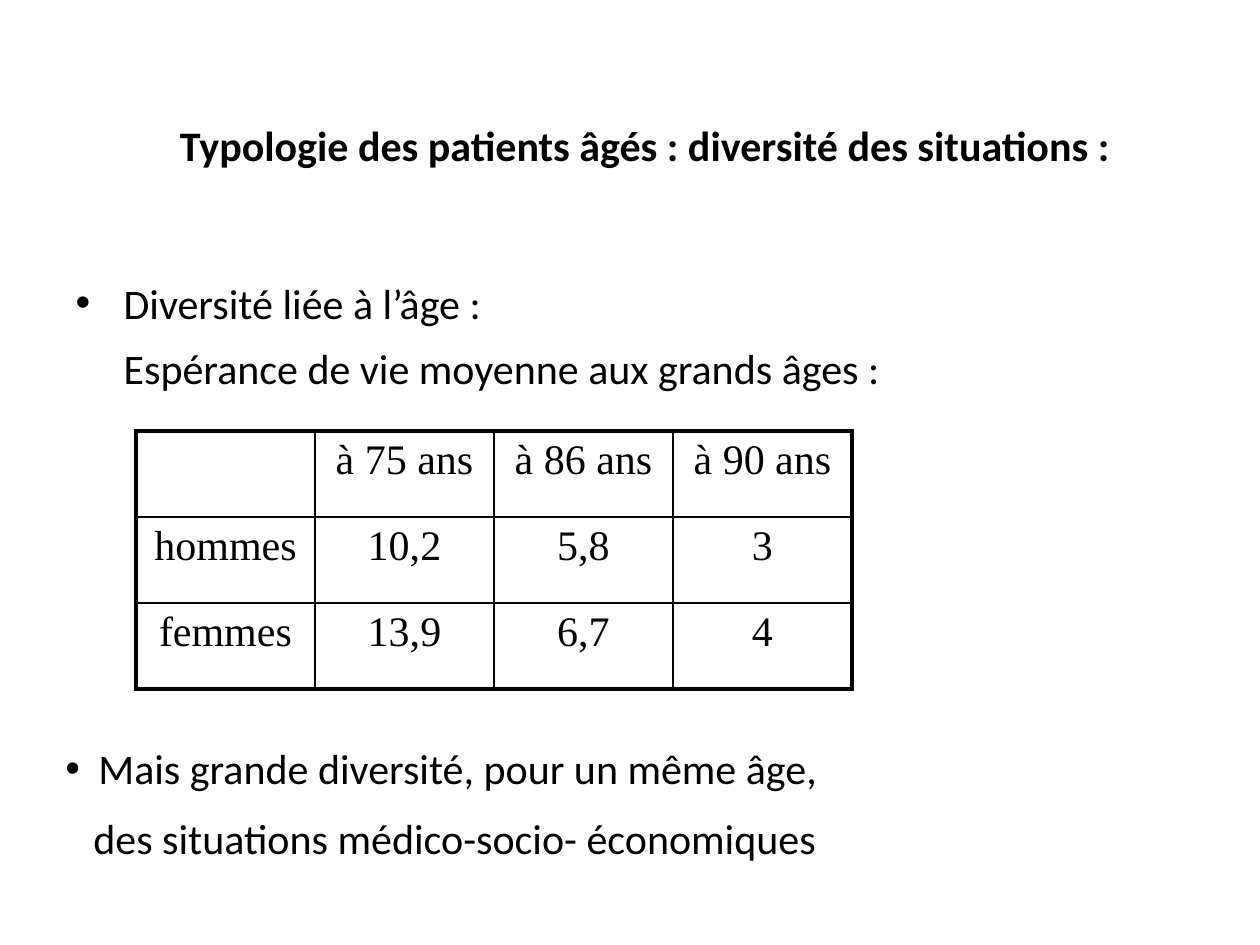
from lxml.etree import SubElement
from pptx import Presentation
from pptx.dml.color import RGBColor
from pptx.enum.text import MSO_ANCHOR as Anchor, MSO_AUTO_SIZE as AutoSize, PP_ALIGN as Align
from pptx.oxml.ns import qn
from pptx.util import Emu, Pt

BLACK = RGBColor(0x00, 0x00, 0x00)
WHITE = RGBColor(0xFF, 0xFF, 0xFF)
SCALE = 914400 / 126


def px(length):
    return Emu(round(length * SCALE))


def apply(target, values):
    for attribute, value in values.items():
        setattr(target, attribute, value)


class SlideBuilder:
    sans = "Calibri"
    serif = "Times New Roman"
    size = Pt(24)

    def __init__(self, deck):
        self.slide = deck.slides.add_slide(deck.slide_layouts[1])
        background = self.slide.background.fill
        background.solid()
        background.fore_color.rgb = WHITE

    def add_text(self, paragraph, wording, font_name, bold=False, **layout):
        run = paragraph.add_run()
        run.text = wording
        apply(run.font, {"name": font_name, "size": self.size, "bold": bold})
        run.font.color.rgb = BLACK
        apply(paragraph, layout)

    def place(self, shape, box, **frame_format):
        apply(shape, dict(zip(("left", "top", "width", "height"), map(px, box))))
        apply(shape.text_frame, {"word_wrap": True, "auto_size": AutoSize.NONE, **frame_format})
        return shape.text_frame

    def title(self, wording, box):
        frame = self.place(self.slide.shapes.title, box, vertical_anchor=Anchor.MIDDLE)
        self.add_text(frame.paragraphs[0], wording, self.sans, True, alignment=Align.CENTER)

    def bullet(self, paragraph, margin, marked):
        properties = paragraph._p.get_or_add_pPr()
        properties.set("marL", str(px(margin)))
        properties.set("indent", str(px(-margin if marked else 0)))
        if marked:
            SubElement(properties, qn("a:buFont"), typeface="Arial")
            SubElement(properties, qn("a:buChar"), char="•")
        else:
            SubElement(properties, qn("a:buNone"))

    def bullet_list(self, frame, lines, gap, line_spacing):
        for index, (wording, margin) in enumerate(lines):
            paragraph = frame.add_paragraph() if index else frame.paragraphs[0]
            self.add_text(paragraph, wording, self.sans, alignment=Align.LEFT,
                          line_spacing=line_spacing, space_before=px(gap if index else 0))
            self.bullet(paragraph, margin, marked=index == 0)

    def body(self, lines, box, inset, gap):
        frame = self.place(self.slide.placeholders[1], box,
                           vertical_anchor=Anchor.TOP, margin_top=px(inset))
        self.bullet_list(frame, lines, gap, 0.8)

    def note(self, lines, box, inset, gap):
        textbox = self.slide.shapes.add_textbox(0, 0, 0, 0)
        frame = self.place(textbox, box, margin_top=px(inset))
        self.bullet_list(frame, lines, gap, 1.0)

    def border(self, cell, side, width):
        line = SubElement(cell._tc.get_or_add_tcPr(), qn(f"a:ln{side}"), w=str(Pt(width)))
        fill = SubElement(line, qn("a:solidFill"))
        SubElement(fill, qn("a:srgbClr"), val=str(BLACK))

    def table(self, rows, left, top, column_width, row_height):
        last_row, last_column = len(rows) - 1, len(rows[0]) - 1
        grid = self.slide.shapes.add_table(
            len(rows), len(rows[0]), px(left), px(top),
            px(column_width * len(rows[0])), px(row_height * len(rows))).table
        apply(grid, {"first_row": False, "horz_banding": False})
        for r, row in enumerate(rows):
            for c, wording in enumerate(row):
                cell = grid.cell(r, c)
                outer = {"L": c == 0, "R": c == last_column, "T": r == 0, "B": r == last_row}
                for side, is_outer in outer.items():
                    self.border(cell, side, 2.25 if is_outer else 1)
                cell.fill.background()
                if wording:
                    self.add_text(cell.text_frame.paragraphs[0], wording, self.serif,
                                  alignment=Align.CENTER)


def main():
    deck = Presentation()
    apply(deck, {"slide_width": px(1260), "slide_height": px(945)})
    builder = SlideBuilder(deck)
    builder.title("Typologie des patients âgés : diversité des situations :", (73, 66, 1144, 158))
    builder.body([("Diversité liée à l’âge :", 48),
                  ("Espérance de vie moyenne aux grands âges :", 48)],
                 (63, 220, 1134, 624), inset=67, gap=25)
    life_expectancy = [
        ("", "à 75 ans", "à 86 ans", "à 90 ans"),
        ("hommes", "10,2", "5,8", "3"),
        ("femmes", "13,9", "6,7", "4"),
    ]
    builder.table(life_expectancy, 136, 431, 179, 86)
    builder.note([("Mais grande diversité, pour un même âge,", 33),
                  ("des situations médico-socio- économiques", 28)],
                 (53, 735, 1155, 140), inset=8, gap=19)
    deck.save("out.pptx")


if __name__ == "__main__":
    main()
